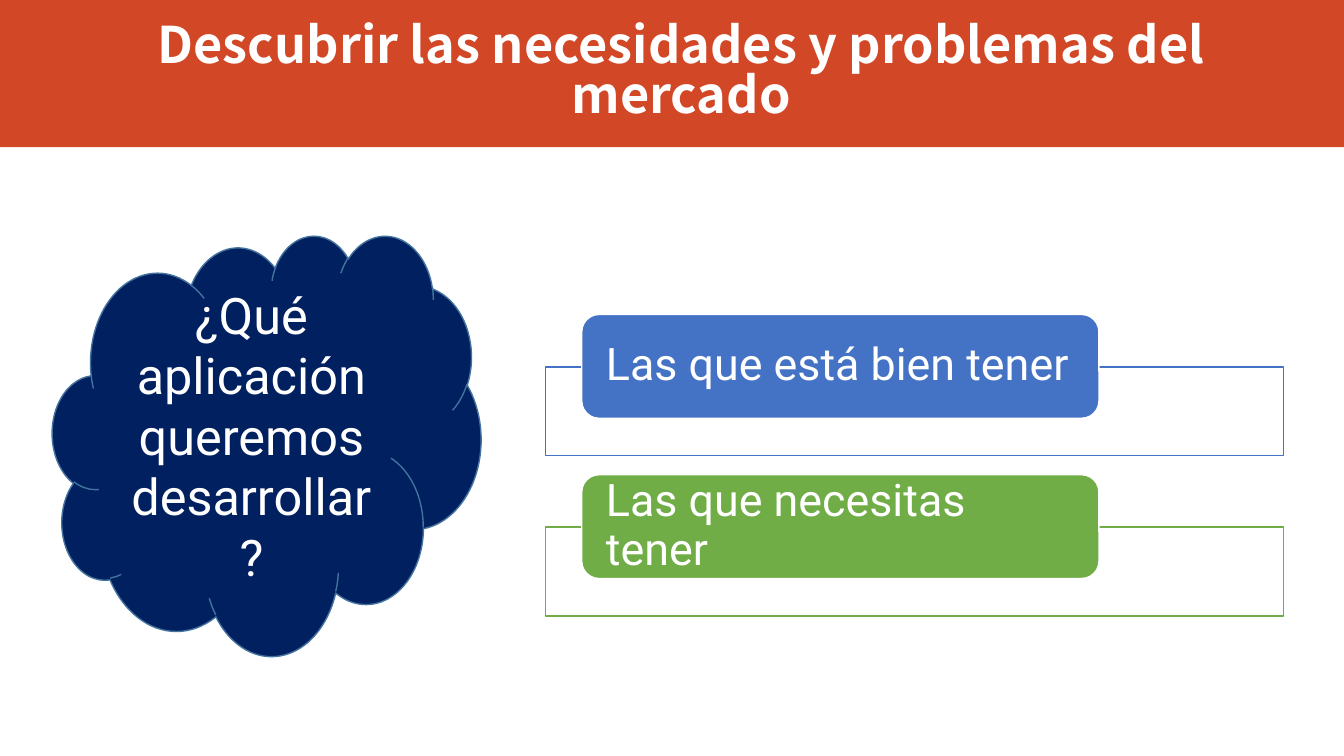
from dataclasses import dataclass

from lxml.etree import SubElement
from pptx import Presentation
from pptx.dml.color import RGBColor
from pptx.enum.shapes import MSO_SHAPE as Shape
from pptx.enum.text import MSO_ANCHOR as Anchor, PP_ALIGN as Align
from pptx.oxml.ns import qn
from pptx.util import Inches, Pt

TITLE = "Descubrir las necesidades y problemas del mercado"
QUESTION = "¿Qué aplicación queremos desarrollar?"
NEEDS = [
    ("Las que está bien tener", "4472C4"),
    ("Las que necesitas tener", "70AD47"),
]


@dataclass(frozen=True)
class Theme:
    white: str = "FFFFFF"
    banner: str = "D24726"
    cloud: str = "002060"
    cloud_line: str = "43739E"
    title_font: str = "Noto Sans CJK SC"
    body_font: str = "Roboto"
    large: int = 36
    medium: int = 32


THEME = Theme()
SLIDE_W, SLIDE_H = 13.33, 7.5
FRAME_LEFT, FRAME_TOP, FRAME_W, FRAME_H = 5.41, 3.64, 7.32, 0.88
LABEL_LEFT, LABEL_W, LABEL_H = 5.77, 5.13, 1.03
LABEL_RISE = 0.52
ROW_PITCH = 1.59


def add_box(page, kind, place, fill, line=None):
    box = page.shapes.add_shape(kind, *map(Inches, place))
    box.shadow.inherit = False
    box.fill.solid()
    box.fill.fore_color.rgb = RGBColor.from_string(fill)
    if line:
        box.line.color.rgb = RGBColor.from_string(line)
        box.line.width = Pt(1)
    else:
        box.line.fill.background()
    return box


def set_opacity(box, percent):
    color = box.fill._xPr.find(qn("a:solidFill"))[0]
    SubElement(color, qn("a:alpha")).set("val", str(percent * 1000))


def write(box, text, font, size, align=Align.CENTER, spacing=None, bold=False):
    frame = box.text_frame
    frame.text = text
    frame.word_wrap = True
    frame.vertical_anchor = Anchor.MIDDLE
    para = frame.paragraphs[0]
    para.alignment = align
    if spacing:
        para.line_spacing = spacing
    span = para.runs[0]
    span.font.name = font
    span.font.size = Pt(size)
    span.font.bold = bold
    span.font.color.rgb = RGBColor.from_string(THEME.white)


def add_need(page, row, text, color):
    """Add one outlined frame with its coloured label over the top edge."""
    top = FRAME_TOP + row * ROW_PITCH
    frame = add_box(page, Shape.RECTANGLE, (FRAME_LEFT, top, FRAME_W, FRAME_H),
                    THEME.white, color)
    set_opacity(frame, 90)
    label = add_box(page, Shape.ROUNDED_RECTANGLE,
                    (LABEL_LEFT, top - LABEL_RISE, LABEL_W, LABEL_H),
                    color, THEME.white)
    write(label, text, THEME.body_font, THEME.medium, Align.LEFT, spacing=0.9)
    inner = label.text_frame
    inner.margin_left = inner.margin_right = Inches(0.19)
    inner.margin_top = inner.margin_bottom = 0


def main():
    deck = Presentation()
    deck.slide_width, deck.slide_height = Inches(SLIDE_W), Inches(SLIDE_H)
    page = deck.slides.add_slide(deck.slide_layouts[6])

    add_box(page, Shape.RECTANGLE, (0, 0, SLIDE_W, 1.46), THEME.banner)
    title = page.shapes.add_textbox(*map(Inches, (0.78, 0.18, 11.95, 1.1)))
    write(title, TITLE, THEME.title_font, THEME.large, spacing=0.83, bold=True)

    cloud = add_box(page, Shape.CLOUD, (0.52, 2.33, 4.25, 4.17),
                    THEME.cloud, THEME.cloud_line)
    write(cloud, QUESTION, THEME.body_font, THEME.large)

    for row, (text, color) in enumerate(NEEDS):
        add_need(page, row, text, color)

    deck.save("out.pptx")


if __name__ == "__main__":
    main()
